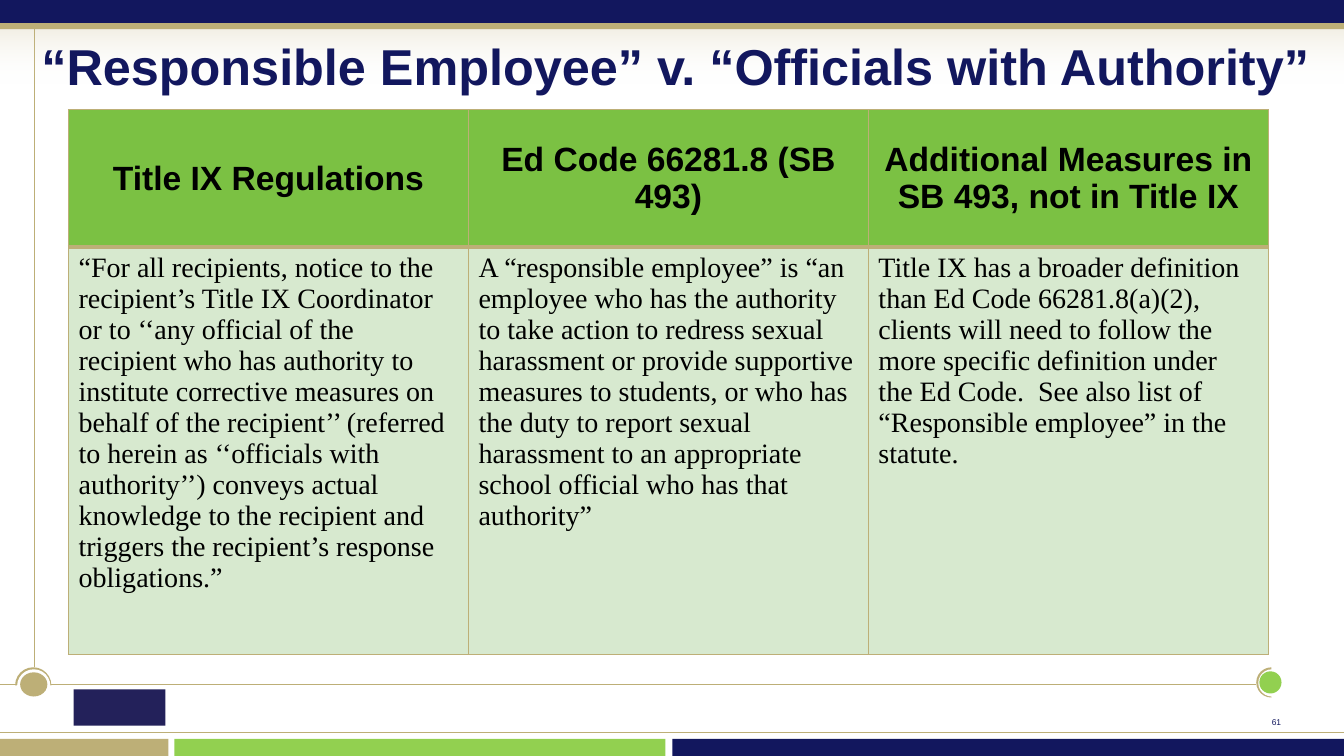
from lxml import etree
from pptx import Presentation
from pptx import util as u
from pptx.dml.color import RGBColor
from pptx.enum import shapes, text
from pptx.oxml import ns

NAVY = RGBColor(0x12, 0x17, 0x5E)
MARK_NAVY = RGBColor(0x23, 0x21, 0x5A)
GOLD = RGBColor(0xBD, 0xAF, 0x77)
LIME = RGBColor(0x92, 0xD0, 0x50)
HEADER_GREEN = RGBColor(0x7B, 0xC1, 0x43)
BODY_GREEN = RGBColor(0xD7, 0xE9, 0xCF)
WHITE = RGBColor(0xFF, 0xFF, 0xFF)
BLACK = RGBColor(0, 0, 0)
PRESET = shapes.MSO_SHAPE

ROWS = [
    ["Title IX Regulations",
     "Ed Code 66281.8 (SB 493)",
     "Additional Measures in SB 493, not in Title IX"],
    ["“For all recipients, notice to the recipient’s Title IX Coordinator or to ‘‘any official of the "
     "recipient who has authority to institute corrective measures on behalf of the recipient’’ (referred "
     "to herein as ‘‘officials with authority’’) conveys actual knowledge to the recipient and triggers "
     "the recipient’s response obligations.”",
     "A “responsible employee” is “an employee who has the authority to take action to redress sexual "
     "harassment or provide supportive measures to students, or who has the duty to report sexual "
     "harassment to an appropriate school official who has that authority”",
     "Title IX has a broader definition than Ed Code 66281.8(a)(2), clients will need to follow the more "
     "specific definition under the Ed Code.  See also list of “Responsible employee” in the statute."],
]


def inches(*values):
    return [u.Inches(value) for value in values]


def set_font(paragraph, name, size, color, bold=False):
    font = paragraph.font
    font.name, font.size, font.bold = name, u.Pt(size), bold
    font.color.rgb = color


def clear_margins(frame):
    frame.margin_left = frame.margin_right = frame.margin_top = frame.margin_bottom = 0


def add_solid(slide, preset, box, color):
    shape = slide.shapes.add_shape(preset, *inches(*box))
    shape.shadow.inherit = False
    shape.line.fill.background()
    shape.fill.solid()
    shape.fill.fore_color.rgb = color
    return shape


def add_rule(slide, start, end):
    rule = slide.shapes.add_connector(shapes.MSO_CONNECTOR.STRAIGHT, *inches(*start, *end))
    rule.line.color.rgb = GOLD
    rule.line.width = u.Pt(1)
    etree.SubElement(rule.element.spPr, ns.qn("a:effectLst"))


def add_fade(slide, box):
    fade = add_solid(slide, PRESET.RECTANGLE, box, WHITE)
    fade.fill.gradient()
    fade.fill.gradient_angle = 270
    for stop, color, position in zip(fade.fill.gradient_stops, (GOLD, WHITE), (0, 1)):
        stop.color.rgb = color
        stop.position = position
    opacities = ("20000", "0")
    for color_element, opacity in zip(fade.element.spPr.iter(ns.qn("a:srgbClr")), opacities):
        etree.SubElement(color_element, ns.qn("a:alpha")).set("val", opacity)


def add_node(slide, box, dot, color, rotation):
    left, top, size = box
    ring = add_solid(slide, PRESET.BLOCK_ARC, (left, top, size, size), GOLD)
    ring.rotation = rotation
    add_solid(slide, PRESET.OVAL, (left + 0.02, top + 0.02, size - 0.03, size - 0.03), WHITE)
    add_solid(slide, PRESET.OVAL, dot, color)


def add_backdrop(slide, width, height):
    rectangle = PRESET.RECTANGLE
    add_node(slide, (12.46, 6.62, 0.3), (12.49, 6.66, 0.22, 0.22), LIME, 270)
    add_rule(slide, (0.34, 0), (0.34, 6.62))
    add_fade(slide, (0, 0.28, width, 0.56))
    add_solid(slide, rectangle, (0, 0, width, 0.24), NAVY)
    bar = 0.17
    for left, right, color in ((0, 1.67, GOLD), (1.73, 6.6, LIME), (6.67, width, NAVY)):
        add_solid(slide, rectangle, (left, height - bar, right - left, bar), color)
    add_solid(slide, rectangle, (0.73, 6.84, 0.91, 0.36), MARK_NAVY)
    for left, right, y in ((0, 0.37, 6.79), (0, width, 7.27), (0.51, 12.46, 6.79)):
        add_rule(slide, (left, y), (right, y))
    add_solid(slide, rectangle, (0, 0.23, width, 0.06), GOLD)
    add_node(slide, (0.15, 6.62, 0.36), (0.2, 6.67, 0.27, 0.24), GOLD, 0)


def add_title(slide, box):
    title = slide.shapes.title
    slide.shapes.element.append(title.element)
    title.left, title.top, title.width, title.height = inches(*box)
    frame = title.text_frame
    frame.text = "“Responsible Employee” v. “Officials with Authority”"
    clear_margins(frame)
    frame.vertical_anchor = text.MSO_ANCHOR.TOP
    frame.auto_size = text.MSO_AUTO_SIZE.NONE
    paragraph = frame.paragraphs[0]
    paragraph.alignment = text.PP_ALIGN.LEFT
    set_font(paragraph, "Arial", 36, NAVY, True)


def set_borders(cell, widths):
    properties = cell._tc.get_or_add_tcPr()
    for index, (side, width) in enumerate(widths.items()):
        line = etree.Element(ns.qn("a:" + side), w=str(u.Pt(width)))
        fill = etree.SubElement(line, ns.qn("a:solidFill"))
        etree.SubElement(fill, ns.qn("a:srgbClr"), val=str(GOLD))
        properties.insert(index, line)


def add_comparison(slide, box, header_height):
    width, height = box[2:]
    table = slide.shapes.add_table(len(ROWS), len(ROWS[0]), *inches(*box)).table
    table.horz_banding = False
    table.rows[0].height = u.Inches(header_height)
    table.rows[1].height = u.Inches(height - header_height)
    for column in table.columns:
        column.width = u.Inches(width / len(ROWS[0]))
    for row, words in enumerate(ROWS):
        header = row == 0
        for column, wording in enumerate(words):
            cell = table.cell(row, column)
            cell.text = wording
            cell.fill.solid()
            cell.fill.fore_color.rgb = HEADER_GREEN if header else BODY_GREEN
            paragraph = cell.text_frame.paragraphs[0]
            if header:
                cell.margin_left = cell.margin_right = u.Inches(0.07)
                cell.margin_top = cell.margin_bottom = 0
                cell.vertical_anchor = text.MSO_ANCHOR.MIDDLE
                paragraph.alignment = text.PP_ALIGN.CENTER
                set_font(paragraph, "Arial", 24, BLACK, True)
            else:
                set_font(paragraph, "Times New Roman", 20, BLACK)
            set_borders(cell, {"lnL": 1, "lnR": 1, "lnT": 1 if header else 3, "lnB": 3 if header else 1})


def add_page_number(slide, box):
    frame = slide.shapes.add_textbox(*inches(*box)).text_frame
    clear_margins(frame)
    frame.word_wrap = True
    frame.vertical_anchor = text.MSO_ANCHOR.MIDDLE
    frame.text = "61"
    frame.paragraphs[0].alignment = text.PP_ALIGN.CENTER
    set_font(frame.paragraphs[0], "Arial", 6, NAVY)


def main():
    presentation = Presentation()
    presentation.slide_width, presentation.slide_height = inches(13.33, 7.5)
    slide = presentation.slides.add_slide(presentation.slide_layouts[5])
    add_backdrop(slide, 13.33, 7.5)
    add_title(slide, (0.41, 0.35, 12.66, 1.21))
    add_comparison(slide, (0.68, 1.09, 11.9, 5.4), 1.36)
    add_page_number(slide, (12.51, 7.08, 0.3, 0.17))
    presentation.save("out.pptx")


if __name__ == "__main__":
    main()
